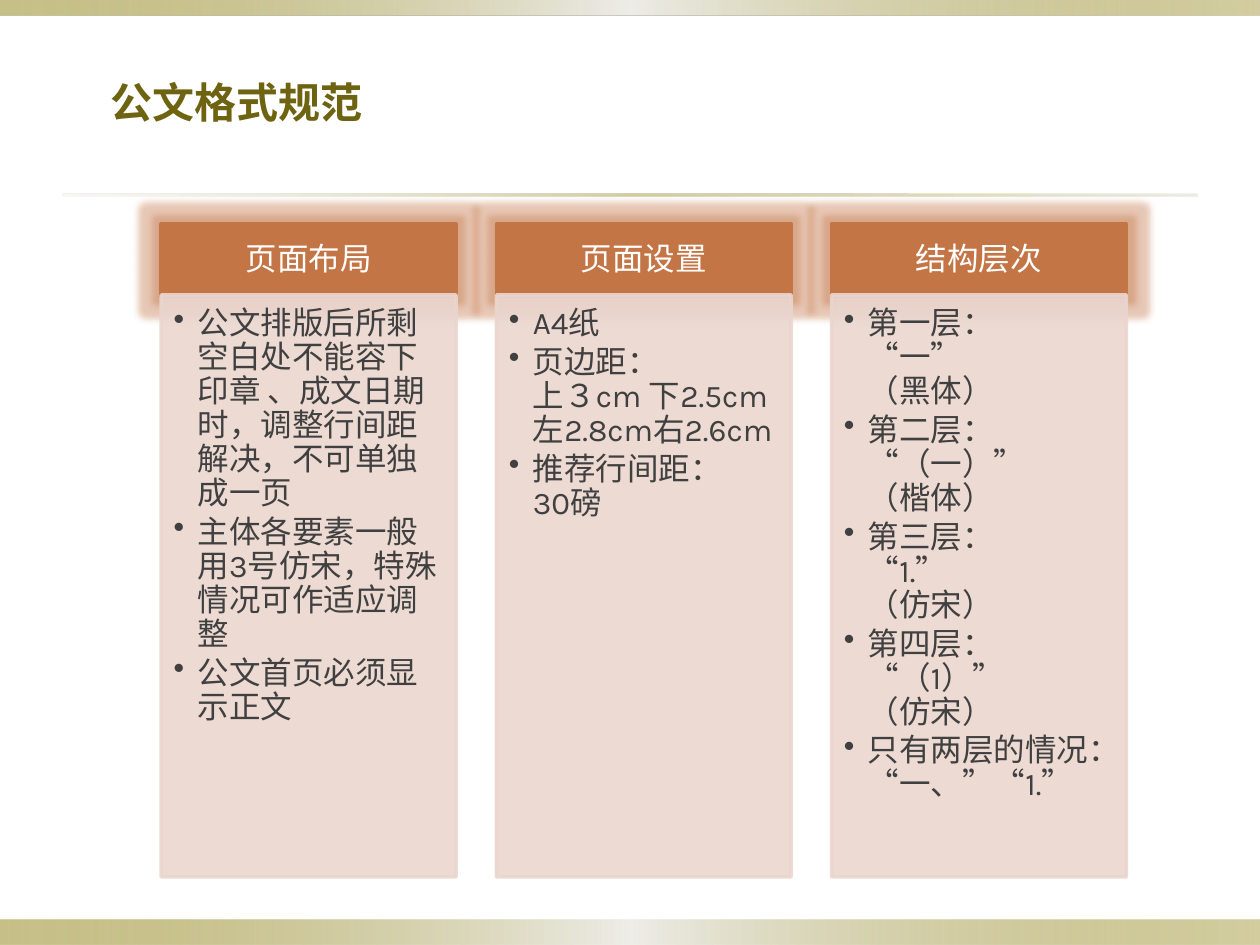
from lxml import etree
from pptx import Presentation
from pptx import util as u
from pptx.dml.color import RGBColor
from pptx.enum import shapes, text
from pptx.oxml import parse_xml
from pptx.oxml.ns import nsdecls, qn

OLIVE = RGBColor(0x91, 0x84, 0x15)
DARK_OLIVE = RGBColor(0x6D, 0x63, 0x10)
PALE = RGBColor(0xEE, 0xED, 0xE8)
SAND = RGBColor(0xDC, 0xD9, 0xCC)
RUST = RGBColor(0xC4, 0x75, 0x46)
BLUSH = RGBColor(0xEA, 0xD6, 0xCF)
GREY = RGBColor(0x40, 0x40, 0x40)
WHITE = RGBColor(0xFF, 0xFF, 0xFF)

# Gradient stops: position, colour, opacity (percent)
BAND = [(0, OLIVE, 50), (50, PALE, 100), (100, OLIVE, 40)]
RULE = [(0, SAND, 20), (50, OLIVE, 40), (100, SAND, 50)]

COLUMNS = [
    ("页面布局", [
        "公文排版后所剩空白处不能容下印章 、成文日期时，调整行间距解决，不可单独成一页",
        "主体各要素一般用3号仿宋，特殊情况可作适应调整",
        "公文首页必须显示正文",
    ]),
    ("页面设置", [
        "A4纸",
        "页边距：\n上３cm 下2.5cm\n左2.8cm右2.6cm",
        "推荐行间距：\n30磅",
    ]),
    ("结构层次", [
        "第一层：\n“一”\n（黑体）",
        "第二层：“（一）”\n（楷体）",
        "第三层：\n“1.”\n（仿宋）",
        "第四层：\n“（1）”\n（仿宋）",
        "只有两层的情况：“一、”“1.”",
    ]),
]


class SlideBuilder:
    latin = "Karla"
    east_asian = "Noto Sans CJK SC"
    body_size = u.Pt(18)

    def __init__(self, slide):
        self.s = slide

    def rect(self, x, y, w, h):
        sp = self.s.shapes.add_shape(shapes.MSO_SHAPE.RECTANGLE,
                                     *map(u.Inches, (x, y, w, h)))
        sp.shadow.inherit = False
        return sp

    def box(self, x, y, w, h, color, opacity=100):
        sp = self.rect(x, y, w, h)
        sp.fill.solid()
        sp.fill.fore_color.rgb = color
        sp.line.color.rgb = color
        sp.line.width = u.Pt(2)
        if opacity < 100:
            for clr in sp._element.spPr.iter(qn("a:srgbClr")):
                etree.SubElement(clr, qn("a:alpha"), val=str(opacity * 1000))
        return sp

    def gradient(self, x, y, w, h, stops):
        sp = self.rect(x, y, w, h)
        sp.line.fill.background()
        gs = "".join(
            f'<a:gs pos="{pos * 1000}"><a:srgbClr val="{color}">'
            f'<a:alpha val="{opacity * 1000}"/></a:srgbClr></a:gs>'
            for pos, color, opacity in stops)
        fill = parse_xml(f'<a:gradFill {nsdecls("a")}><a:gsLst>{gs}</a:gsLst>'
                         '<a:lin ang="0" scaled="0"/></a:gradFill>')
        sp._element.spPr.find(qn("a:prstGeom")).addnext(fill)

    def glow(self, sp, color, radius, opacity):
        effects = sp._element.spPr.find(qn("a:effectLst"))
        glow = etree.SubElement(effects, qn("a:glow"), rad=str(u.Pt(radius)))
        clr = etree.SubElement(glow, qn("a:srgbClr"), val=str(color))
        etree.SubElement(clr, qn("a:alpha"), val=str(opacity * 1000))

    def style(self, p, size, color, latin=None, bold=False):
        for r in p.runs:
            r.font.size, r.font.bold = size, bold
            r.font.color.rgb = color
            r.font.name = latin or self.latin
            etree.SubElement(r._r.get_or_add_rPr(), qn("a:ea"),
                             typeface=self.east_asian)

    def insets(self, tf, left, top, right, bottom):
        tf.word_wrap = True
        tf.margin_left, tf.margin_top = u.Inches(left), u.Inches(top)
        tf.margin_right, tf.margin_bottom = u.Inches(right), u.Inches(bottom)

    def title(self, x, y, w, h, words):
        sp = self.s.shapes.add_textbox(*map(u.Inches, (x, y, w, h)))
        tf = sp.text_frame
        tf.word_wrap = True
        tf.auto_size = text.MSO_AUTO_SIZE.SHAPE_TO_FIT_TEXT
        tf.text = words
        self.style(tf.paragraphs[0], u.Pt(24), DARK_OLIVE, self.east_asian, True)

    def header(self, x, y, w, h, words):
        sp = self.box(x, y, w, h, RUST)
        self.glow(sp, RUST, 8, 40)
        tf = sp.text_frame
        self.insets(tf, 0.14, 0.08, 0.14, 0.08)
        tf.vertical_anchor = text.MSO_ANCHOR.MIDDLE
        tf.text = words
        p = tf.paragraphs[0]
        p.alignment = text.PP_ALIGN.CENTER
        p.line_spacing = 0.9
        self.style(p, self.body_size, WHITE)

    def bullets(self, x, y, w, h, items):
        tf = self.box(x, y, w, h, BLUSH, 90).text_frame
        self.insets(tf, 0.1, 0.1, 0.14, 0.16)
        tf.vertical_anchor = text.MSO_ANCHOR.TOP
        for i, item in enumerate(items):
            p = tf.add_paragraph() if i else tf.paragraphs[0]
            p.text = item
            p.level = 1
            p.alignment = text.PP_ALIGN.LEFT
            p.line_spacing = 0.9
            p.space_after = u.Pt(2.7)
            pPr = p._p.get_or_add_pPr()
            pPr.set("marL", str(u.Inches(0.19)))
            pPr.set("indent", str(u.Inches(-0.19)))
            etree.SubElement(pPr, qn("a:buChar"), char="•")
            self.style(p, self.body_size, GREY)


def main():
    prs = Presentation()
    prs.slide_width, prs.slide_height = u.Inches(10), u.Inches(7.5)
    b = SlideBuilder(prs.slides.add_slide(prs.slide_layouts[6]))

    # Bands and rule
    b.gradient(0, 7.3, 10, 0.2, BAND)
    b.gradient(0, 0, 10, 0.12, BAND)
    b.gradient(0.5, 1.54, 9, 0.02, RULE)

    # Title
    b.title(0.78, 0.56, 5.95, 0.5, "公文格式规范")

    # Three columns
    left, pitch, width = 1.28, 2.66, 2.34
    for i, (heading, items) in enumerate(COLUMNS):
        x = left + i * pitch
        b.header(x, 1.78, width, 0.57, heading)
        b.bullets(x, 2.34, width, 4.62, items)

    prs.save("out.pptx")


if __name__ == "__main__":
    main()
